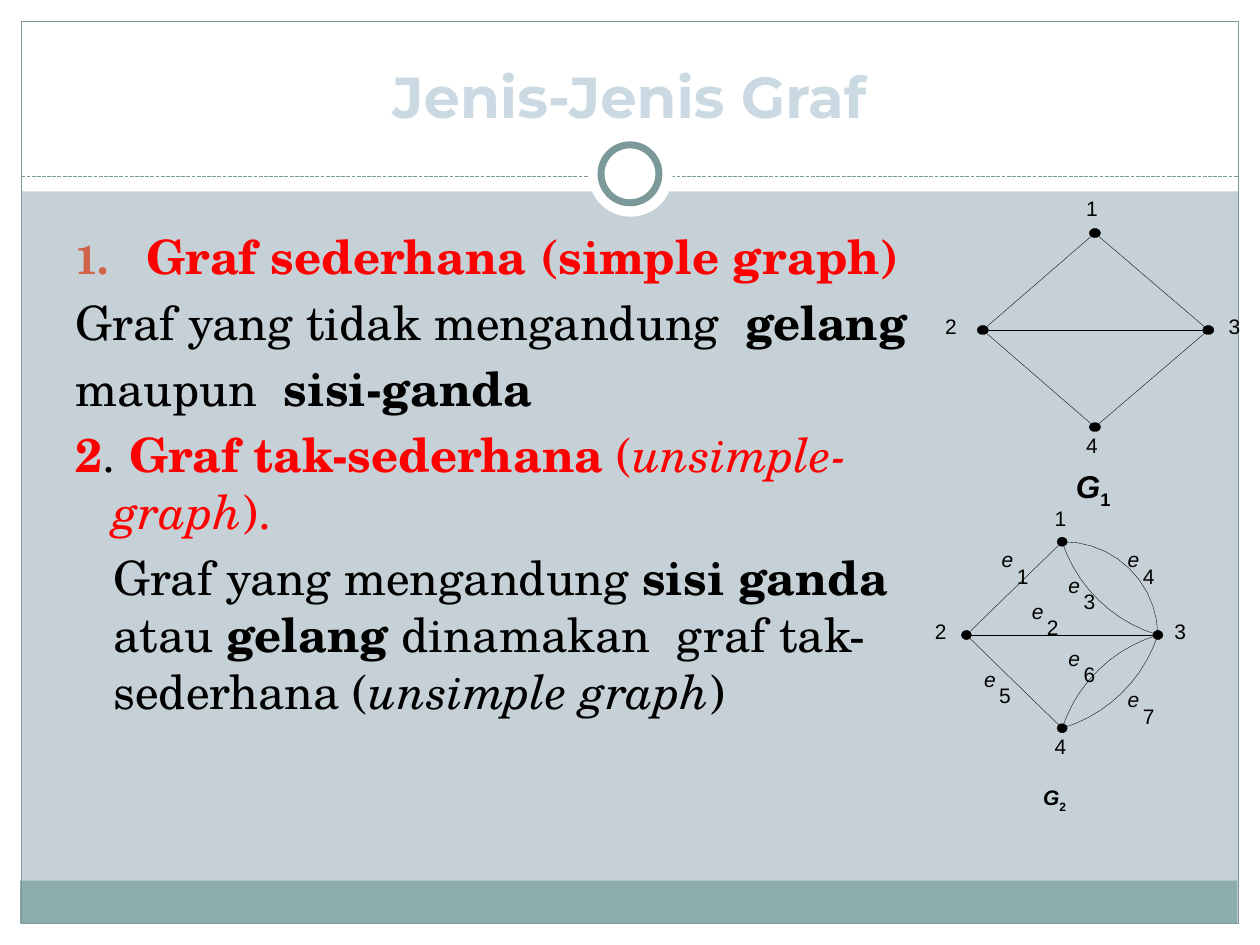
"""Build a slide that sets a simple graph beside a non-simple graph."""
from dataclasses import dataclass
from math import atan, cos, hypot, sin

from lxml.etree import SubElement
from pptx import Presentation
from pptx.dml.color import RGBColor
from pptx.enum.dml import MSO_LINE
from pptx.enum.shapes import MSO_CONNECTOR, MSO_SHAPE
from pptx.enum.text import MSO_ANCHOR, MSO_AUTO_SIZE, PP_ALIGN
from pptx.oxml.ns import qn
from pptx.util import Inches, Pt

Point = tuple[float, float]
Box = tuple[float, float, float, float]

BLACK, WHITE, RED, TEAL = "000000", "FFFFFF", "FF0000", "7C999A"
HAIRLINE = 0.2


@dataclass
class Panel:
    box: Box
    fill: str | None = WHITE
    line: str | None = None
    line_width: float = 0.75
    preset: MSO_SHAPE = MSO_SHAPE.RECTANGLE


@dataclass
class Run:
    text: str
    color: str = BLACK
    bold: bool = False
    italic: bool = False


@dataclass
class Item:
    runs: list[Run]
    margin: float
    indent: float
    numbered: bool = False


@dataclass
class Graph:
    nodes: dict[str, Point]
    node_labels: dict[str, Point]
    node_size: Point
    edges: list[str]
    arcs: list[tuple[str, float]]
    edge_labels: dict[str, Point]
    subscript: str
    name_box: Box
    name_size: float


PANELS = [
    Panel((0, 7.33, 10, 0.17)),
    Panel((0, 0, 10, 1.52)),
    Panel((0, 0, 0.17, 7.5)),
    Panel((9.83, 0, 0.17, 7.5)),
    Panel((0.16, 6.99, 9.66, 0.34), "8CADAE"),
    Panel((0.17, 0.17, 9.66, 7.16), None, TEAL),
]
RINGS = [
    Panel((4.67, 1.05, 0.67, 0.67), preset=MSO_SHAPE.OVAL),
    Panel((4.77, 1.15, 0.46, 0.46), WHITE, TEAL, 4, MSO_SHAPE.OVAL),
]
ITEMS = [
    Item([Run("Graf sederhana (simple graph)", RED, True)], 0.56, -0.56, True),
    Item([Run("Graf yang tidak mengandung  "), Run("gelang", bold=True)], 0.56, -0.56),
    Item([Run("maupun  "), Run("sisi-ganda", bold=True)], 0.56, -0.56),
    Item([Run("2", RED, True), Run(". "), Run("Graf tak-sederhana", RED, True),
          Run(" (", RED), Run("unsimple-graph", RED, italic=True), Run(").", RED)], 0.3, -0.3),
    Item([Run("Graf yang mengandung "), Run("sisi ganda ", bold=True), Run("atau "),
          Run("gelang ", bold=True), Run("dinamakan  graf tak-sederhana ("),
          Run("unsimple graph", italic=True), Run(")")], 0.3, 0),
]
GRAPHS = [
    Graph(
        nodes={"1": (8.69, 1.85), "2": (7.8, 2.62), "3": (9.59, 2.62), "4": (8.69, 3.39)},
        node_labels={"1": (8.62, 1.55), "2": (7.5, 2.49), "3": (9.75, 2.49), "4": (8.62, 3.43)},
        node_size=(0.09, 0.07),
        edges=["12", "24", "13", "34", "23"],
        arcs=[],
        edge_labels={},
        subscript="1", name_box=(8.44, 3.66, 0.49, 0.4), name_size=18,
    ),
    Graph(
        nodes={"1": (8.43, 4.3), "2": (7.67, 5.04), "3": (9.19, 5.04), "4": (8.43, 5.78)},
        node_labels={"1": (8.37, 4.01), "2": (7.42, 4.91), "3": (9.32, 4.91), "4": (8.37, 5.82)},
        node_size=(0.08, 0.07),
        edges=["24", "12", "23"],
        arcs=[("13", -0.13), ("34", -0.13), ("13", 0.22), ("34", 0.13)],
        edge_labels={"1": (7.95, 4.34), "2": (8.19, 4.75), "3": (8.48, 4.54), "4": (8.95, 4.34),
                     "5": (7.81, 5.29), "6": (8.48, 5.12), "7": (8.95, 5.45)},
        subscript="2", name_box=(8.18, 6.18, 0.4, 0.3), name_size=12,
    ),
]


def rgb(value: str) -> RGBColor:
    """Turn a hex string into a colour."""
    return RGBColor.from_string(value)


def lengths(values) -> list[int]:
    """Turn inches into slide lengths."""
    return [Inches(value) for value in values]


def set_line(shape, color: str, width: float) -> None:
    """Give a shape a solid outline."""
    shape.line.color.rgb = rgb(color)
    shape.line.width = Pt(width)


def set_font(font, name: str, size: float, color: str = BLACK) -> None:
    """Set typeface, size and colour."""
    font.name, font.size, font.color.rgb = name, Pt(size), rgb(color)


def add_panel(shapes, panel: Panel) -> None:
    """Draw a preset shape without a shadow."""
    shape = shapes.add_shape(panel.preset, *lengths(panel.box))
    shape.shadow.inherit = False
    if panel.fill:
        shape.fill.solid()
        shape.fill.fore_color.rgb = rgb(panel.fill)
    else:
        shape.fill.background()
    if panel.line:
        set_line(shape, panel.line, panel.line_width)
    else:
        shape.line.fill.background()


def add_line(shapes, start: Point, end: Point, color: str = BLACK, width: float = HAIRLINE):
    """Draw a straight line without a shadow."""
    line = shapes.add_connector(MSO_CONNECTOR.STRAIGHT, *lengths(start + end))
    set_line(line, color, width)
    SubElement(line.element.spPr, qn("a:effectLst"))
    return line


def add_arc(shapes, start: Point, end: Point, bulge: float, steps: int = 10) -> None:
    """Draw a circular arc that rises by bulge from its chord."""
    chord = hypot(end[0] - start[0], end[1] - start[1])
    unit_x, unit_y = (end[0] - start[0]) / chord, (end[1] - start[1]) / chord
    half_angle = 2 * atan(2 * bulge / chord)
    radius = chord / (2 * sin(half_angle))
    points = []
    for step in range(steps + 1):
        angle = half_angle * (2 * step / steps - 1)
        along = chord / 2 + radius * sin(angle)
        across = radius * (cos(angle) - cos(half_angle))
        points.append(lengths((start[0] + along * unit_x + across * unit_y,
                               start[1] + along * unit_y - across * unit_x)))
    builder = shapes.build_freeform(*points[0])
    builder.add_line_segments(points[1:], close=False)
    arc = builder.convert_to_shape()
    arc.shadow.inherit = False
    arc.fill.background()
    set_line(arc, BLACK, HAIRLINE)


def add_label(shapes, text: str, position: Point, size: Point, italic: bool = False) -> None:
    """Write a small label without insets."""
    frame = shapes.add_textbox(*lengths(position + size)).text_frame
    frame.margin_left = frame.margin_top = frame.margin_right = frame.margin_bottom = 0
    frame.word_wrap = True
    paragraph = frame.paragraphs[0]
    paragraph.add_run().text = text
    set_font(paragraph.font, "Arial", 12)
    paragraph.font.italic = italic


def add_graph_name(shapes, graph: Graph) -> None:
    """Write the letter G with its subscript."""
    frame = shapes.add_textbox(*lengths(graph.name_box)).text_frame
    frame.word_wrap = False
    frame.auto_size = MSO_AUTO_SIZE.SHAPE_TO_FIT_TEXT
    paragraph = frame.paragraphs[0]
    set_font(paragraph.font, "Arial", graph.name_size)
    paragraph.font.bold = True
    letter, subscript = paragraph.add_run(), paragraph.add_run()
    letter.text, subscript.text = "G", graph.subscript
    letter.font.italic = True
    subscript.font._element.set("baseline", "-25000")


def add_graph(slide, graph: Graph) -> None:
    """Draw a graph as one group."""
    shapes = slide.shapes.add_group_shape().shapes
    width, height = graph.node_size
    for x, y in graph.nodes.values():
        box = (x - width / 2, y - height / 2, width, height)
        add_panel(shapes, Panel(box, BLACK, BLACK, HAIRLINE, MSO_SHAPE.DECAGON))
    for start, end in graph.edges:
        add_line(shapes, graph.nodes[start], graph.nodes[end])
    for (start, end), bulge in graph.arcs:
        add_arc(shapes, graph.nodes[start], graph.nodes[end], bulge)
    for text, position in graph.node_labels.items():
        add_label(shapes, text, position, (0.25, 0.3))
    for text, (x, y) in graph.edge_labels.items():
        add_label(shapes, "e", (x, y), (0.21, 0.31), italic=True)
        add_label(shapes, text, (x + 0.12, y + 0.13), (0.14, 0.2))
    add_graph_name(shapes, graph)


def place(placeholder, box: Box) -> None:
    """Move a placeholder to a box, in front of the shapes drawn so far."""
    placeholder.left, placeholder.top, placeholder.width, placeholder.height = lengths(box)
    placeholder.element.getparent().append(placeholder.element)
    placeholder.text_frame.auto_size = MSO_AUTO_SIZE.NONE


def fill_title(title) -> None:
    """Write the title."""
    place(title, (0.33, 0.25, 9.33, 0.83))
    title.text_frame.vertical_anchor = MSO_ANCHOR.BOTTOM
    paragraph = title.text_frame.paragraphs[0]
    paragraph.add_run().text = "Jenis-Jenis Graf"
    paragraph.alignment = PP_ALIGN.CENTER
    set_font(paragraph.font, "Montserrat", 33, "CBDAE2")
    paragraph.font.bold = True


def fill_body(body) -> None:
    """Write the definitions."""
    place(body, (0.5, 1.75, 7.47, 5.13))
    frame = body.text_frame
    for index, item in enumerate(ITEMS):
        paragraph = frame.add_paragraph() if index else frame.paragraphs[0]
        paragraph.space_before = Pt(5.4)
        properties = paragraph._p.get_or_add_pPr()
        properties.set("marL", str(Inches(item.margin)))
        properties.set("indent", str(Inches(item.indent)))
        if item.numbered:
            SubElement(SubElement(properties, qn("a:buClr")), qn("a:srgbClr"), val="D16349")
            SubElement(properties, qn("a:buSzPct"), val="85000")
            SubElement(properties, qn("a:buFont"), typeface="+mj-lt")
            SubElement(properties, qn("a:buAutoNum"), type="arabicPeriod")
        else:
            SubElement(properties, qn("a:buNone"))
        set_font(paragraph.font, "TeX Gyre Schola", 27)
        for part in item.runs:
            run = paragraph.add_run()
            run.text = part.text
            run.font.color.rgb = rgb(part.color)
            run.font.bold, run.font.italic = part.bold, part.italic


def main() -> None:
    """Build and save the slide."""
    presentation = Presentation()
    presentation.slide_width, presentation.slide_height = Inches(10), Inches(7.5)
    slide = presentation.slides.add_slide(presentation.slide_layouts[1])
    slide.background.fill.solid()
    slide.background.fill.fore_color.rgb = rgb("C5D1D7")
    for panel in PANELS:
        add_panel(slide.shapes, panel)
    divider = add_line(slide.shapes, (0.17, 1.4), (9.83, 1.4), TEAL, 0.75)
    divider.line.dash_style = MSO_LINE.SQUARE_DOT
    for ring in RINGS:
        add_panel(slide.shapes, ring)
    fill_title(slide.shapes.title)
    fill_body(slide.placeholders[1])
    for graph in GRAPHS:
        add_graph(slide, graph)
    presentation.save("out.pptx")


if __name__ == "__main__":
    main()
